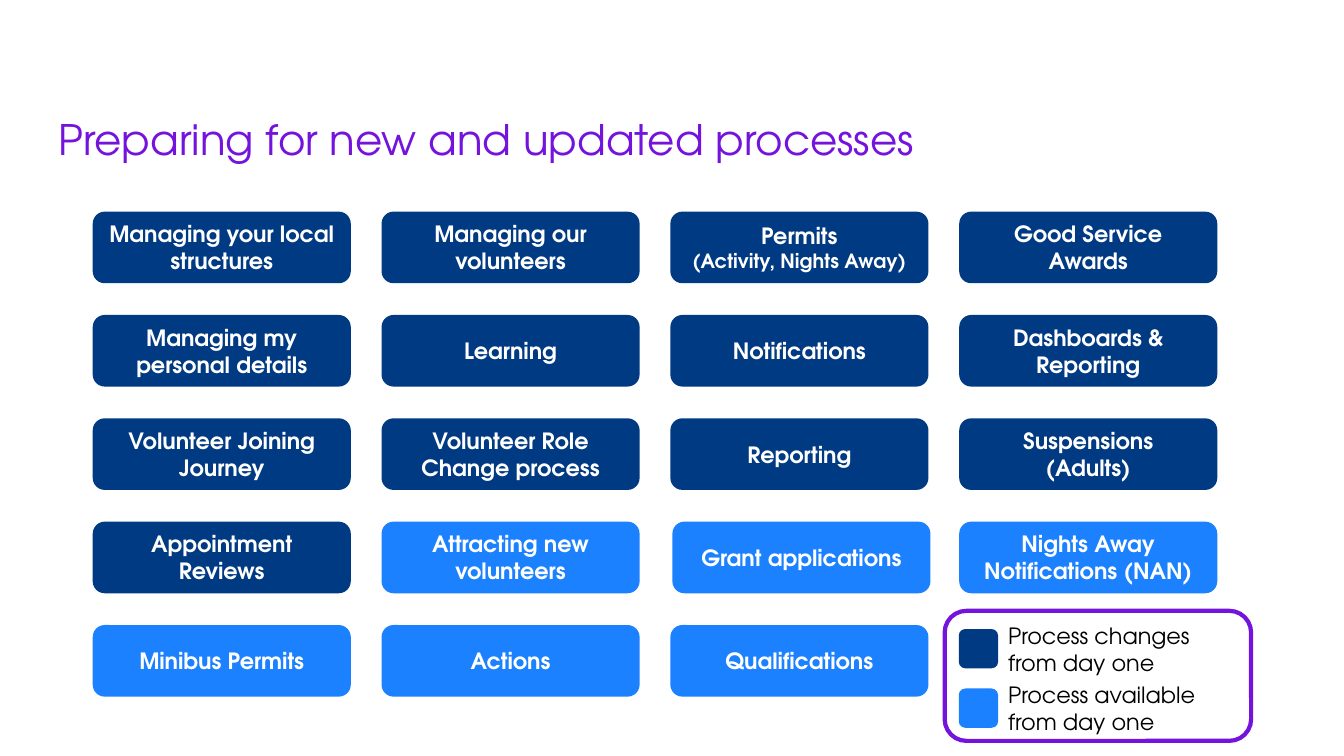
import pptx
import pptx.util
import pptx.dml.color
import pptx.enum.shapes
import pptx.enum.text

Align = pptx.enum.text.PP_ALIGN
Anchor = pptx.enum.text.MSO_ANCHOR

NAVY, BLUE, PURPLE = "003A82", "1B81FF", "7413DC"
WHITE, BLACK = "FFFFFF", "000000"

# Each row runs left to right: text, fill
TILES = [
    [("Managing your local structures", NAVY), ("Managing our volunteers", NAVY),
     ("Permits", NAVY), ("Good Service Awards", NAVY)],
    [("Managing my personal details", NAVY), ("Learning", NAVY),
     ("Notifications", NAVY), ("Dashboards & Reporting", NAVY)],
    [("Volunteer Joining Journey", NAVY), ("Volunteer Role Change process", NAVY),
     ("Reporting", NAVY), ("Suspensions\n(Adults)", NAVY)],
    [("Appointment Reviews", NAVY), ("Attracting new volunteers", BLUE),
     ("Grant applications", BLUE), ("Nights Away Notifications (NAN)", BLUE)],
    [("Minibus Permits", BLUE), ("Actions", BLUE), ("Qualifications", BLUE)],
]
NOTES = {"Permits": "(Activity, Nights Away)"}
SHIFTS = {"Grant applications": 0.15}
LEGEND = [("Process changes from day one", NAVY),
          ("Process available from day one", BLUE)]


def paint(code):
    return pptx.dml.color.RGBColor.from_string(code)


def write(frame, text, size=16, color=BLACK, bold=False, align=Align.LEFT,
          anchor=Anchor.TOP, font="TeX Gyre Adventor", note=""):
    """Fill a frame; the note is a second, smaller paragraph."""
    frame.word_wrap = True
    frame.auto_size = pptx.enum.text.MSO_AUTO_SIZE.NONE
    frame.vertical_anchor = anchor
    lines = [(frame.paragraphs[0], text, size)]
    if note:
        lines.append((frame.add_paragraph(), note, size - 2))
    for line, words, points in lines:
        line.text = words
        line.alignment = align
        for run in line.runs:
            run.font.name = font
            run.font.size = pptx.util.Pt(points)
            run.font.bold = bold
            run.font.color.rgb = paint(color)


class Board:
    """A slide on a grid of 100 columns by 100 rows."""

    def __init__(self, deck):
        self.wide, self.high = deck.slide_width, deck.slide_height
        self.slide = deck.slides.add_slide(deck.slide_layouts[5])

    def place(self, left, top, width, height):
        return (round(left * self.wide / 100), round(top * self.high / 100),
                round(width * self.wide / 100), round(height * self.high / 100))

    def title(self, text, *spot):
        head = self.slide.shapes.title
        head.left, head.top, head.width, head.height = self.place(*spot)
        frame = head.text_frame
        frame.margin_left = frame.margin_right = 0
        frame.margin_top = frame.margin_bottom = 0
        write(frame, text, size=30, color=PURPLE)

    def box(self, *spot, fill=None, line=None):
        kind = pptx.enum.shapes.MSO_SHAPE.FLOWCHART_ALTERNATE_PROCESS
        shape = self.slide.shapes.add_shape(kind, *self.place(*spot))
        shape.shadow.inherit = False
        if fill:
            shape.fill.solid()
            shape.fill.fore_color.rgb = paint(fill)
        else:
            shape.fill.background()
        if line:
            shape.line.color.rgb = paint(line)
            shape.line.width = pptx.util.Pt(3)
        else:
            shape.line.fill.background()
        return shape

    def tile(self, text, *spot, fill, note=""):
        write(self.box(*spot, fill=fill).text_frame, text, color=WHITE, bold=True,
              align=Align.CENTER, anchor=Anchor.MIDDLE, note=note)

    def label(self, text, *spot):
        write(self.slide.shapes.add_textbox(*self.place(*spot)).text_frame, text)


def main():
    deck = pptx.Presentation()
    deck.slide_width = pptx.util.Inches(13.33)
    deck.slide_height = pptx.util.Inches(7.5)
    board = Board(deck)

    board.title("Preparing for new and updated processes", 4.35, 15.07, 88.75, 6.67)
    for row, tiles in enumerate(TILES):
        for col, (text, fill) in enumerate(tiles):
            left = 6.9 + 21.49 * col + SHIFTS.get(text, 0)
            board.tile(text, left, 28 + 13.67 * row, 19.2, 9.47,
                       fill=fill, note=NOTES.get(text, ""))

    for row, (text, fill) in enumerate(LEGEND):
        drop = 7.87 * row
        board.box(71.34, 83.2 + drop, 2.93, 5.2, fill=fill)
        board.label(text, 74.27, 81.6 + drop, 18.38, 8.53)
    board.box(70.29, 80.8, 22.8, 17.2, line=PURPLE)

    deck.save("out.pptx")


if __name__ == "__main__":
    main()
